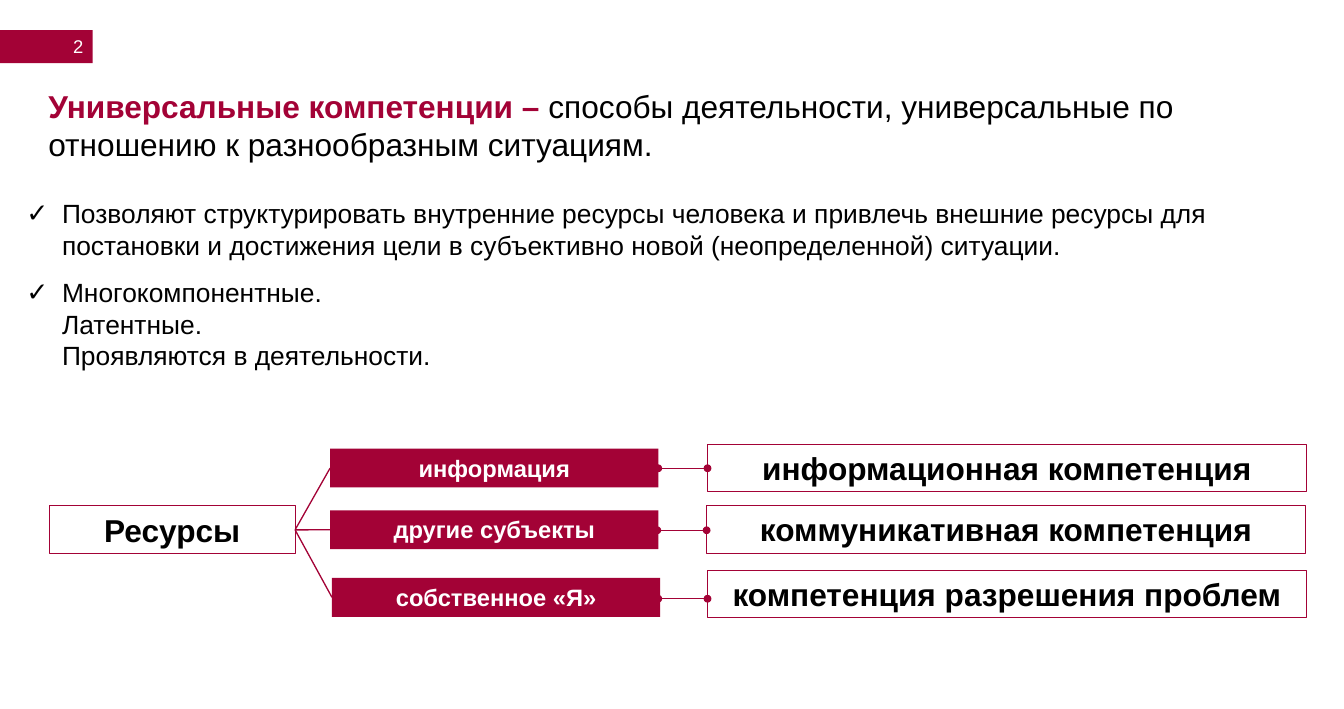
from lxml import etree
from pptx import Presentation
from pptx.dml.color import RGBColor
from pptx.enum.shapes import MSO_CONNECTOR, MSO_SHAPE
from pptx.enum.text import MSO_ANCHOR, MSO_AUTO_SIZE, PP_ALIGN
from pptx.oxml.ns import qn
from pptx.util import Pt

RECTANGLE = MSO_SHAPE.RECTANGLE
STRAIGHT = MSO_CONNECTOR.STRAIGHT
TOP, MIDDLE = MSO_ANCHOR.TOP, MSO_ANCHOR.MIDDLE
NO_AUTOFIT = MSO_AUTO_SIZE.NONE
LEFT, CENTER, RIGHT = PP_ALIGN.LEFT, PP_ALIGN.CENTER, PP_ALIGN.RIGHT


def color(hex_text):
    return RGBColor.from_string(hex_text)


class CompetenceSlide:
    """Holds the style and the slide, and draws each kind of element."""

    font_name = "Arial"
    accent, ink, paper = "A30236", "000000", "FFFFFF"

    def __init__(self, slide):
        self.slide = slide

    def set_font(self, font, size, hex_text, bold=False):
        font.name = self.font_name
        font.size = Pt(size)
        font.bold = bold
        font.color.rgb = color(hex_text)

    def place(self, shape, left, top, width, height):
        shape.left, shape.top = Pt(left), Pt(top)
        shape.width, shape.height = Pt(width), Pt(height)

    def title(self, term, definition, *bounds):
        heading = self.slide.shapes.title
        self.place(heading, *bounds)
        frame = heading.text_frame
        frame.auto_size = NO_AUTOFIT
        frame.word_wrap = True
        frame.vertical_anchor = TOP
        paragraph = frame.paragraphs[0]
        paragraph.alignment = LEFT
        for text, hex_text, bold in ((term, self.accent, True), (definition, self.ink, False)):
            run = paragraph.add_run()
            run.text = text
            self.set_font(run.font, 24, hex_text, bold)

    def bullets(self, items, *bounds):
        frame = self.slide.shapes.add_textbox(*map(Pt, bounds)).text_frame
        frame.word_wrap = True
        for index, item in enumerate(items):
            paragraph = frame.add_paragraph() if index else frame.paragraphs[0]
            paragraph.text = item
            if index:
                paragraph.space_before = Pt(12)
            properties = paragraph._p.get_or_add_pPr()
            properties.set("marL", str(Pt(27)))
            properties.set("indent", str(Pt(-27)))
            etree.SubElement(properties, qn("a:buFont"), typeface=self.font_name)
            etree.SubElement(properties, qn("a:buChar"), char="✓")
            self.set_font(paragraph.font, 20, self.ink)

    def box(self, text, bounds, size, filled, bold=True, align=CENTER, anchor=TOP):
        shape = self.slide.shapes.add_shape(RECTANGLE, *map(Pt, bounds))
        shape.shadow.inherit = False
        if filled:
            shape.fill.solid()
            shape.fill.fore_color.rgb = color(self.accent)
            shape.line.fill.background()
        else:
            shape.fill.background()
            shape.line.color.rgb = color(self.accent)
            shape.line.width = Pt(0.75)
        frame = shape.text_frame
        frame.word_wrap = True
        frame.vertical_anchor = anchor
        paragraph = frame.paragraphs[0]
        paragraph.text = text
        paragraph.alignment = align
        self.set_font(paragraph.font, size, self.paper if filled else self.ink, bold)

    def link(self, start, end, dotted=False):
        connector = self.slide.shapes.add_connector(STRAIGHT, *map(Pt, start + end))
        connector.line.color.rgb = color(self.accent)
        connector.line.width = Pt(1)
        if dotted:
            outline = connector.line._get_or_add_ln()
            for tag in ("a:headEnd", "a:tailEnd"):
                etree.SubElement(outline, qn(tag), type="oval")
        etree.SubElement(connector._element.spPr, qn("a:effectLst"))


def main():
    presentation = Presentation()
    presentation.slide_width, presentation.slide_height = Pt(1020.24), Pt(538.56)
    page = CompetenceSlide(presentation.slides.add_slide(presentation.slide_layouts[5]))

    page.box("2", (0, 22.8, 70.4, 25.2), 14, True, bold=False, align=RIGHT, anchor=MIDDLE)
    page.title(
        "Универсальные компетенции – ",
        "способы деятельности, универсальные по отношению к разнообразным ситуациям.",
        29.5, 62.6, 956, 65.5,
    )
    page.bullets(
        [
            "Позволяют структурировать внутренние ресурсы человека и привлечь внешние ресурсы "
            "для постановки и достижения цели в субъективно новой (неопределенной) ситуации.",
            "Многокомпонентные.\vЛатентные.\vПроявляются в деятельности.",
        ],
        13, 146.2, 989.3, 140.4,
    )

    page.box("Ресурсы", (37.4, 384.2, 186.6, 36.4), 24, False)
    resources_exit = (224, 402.5)
    resource_width, resource_height = 249.2, 29.5
    rows = [
        ("информация", 250.6, 340.8, "информационная компетенция", 537.1, 337.5, 355.7),
        ("другие субъекты", 250.6, 387.7, "коммуникативная компетенция", 536.4, 384, 402.8),
        ("собственное «Я»", 252, 439, "компетенция разрешения проблем", 537.1, 433.2, 454.8),
    ]
    for resource, left, top, competence, competence_left, competence_top, link_y in rows:
        page.box(resource, (left, top, resource_width, resource_height), 18, True)
        page.box(competence, (competence_left, competence_top, 454.3, 36.2), 24, False)
        page.link(resources_exit, (left, top + resource_height / 2))
        page.link((competence_left - 37.4, link_y), (competence_left, link_y), dotted=True)

    presentation.save("out.pptx")


if __name__ == "__main__":
    main()
